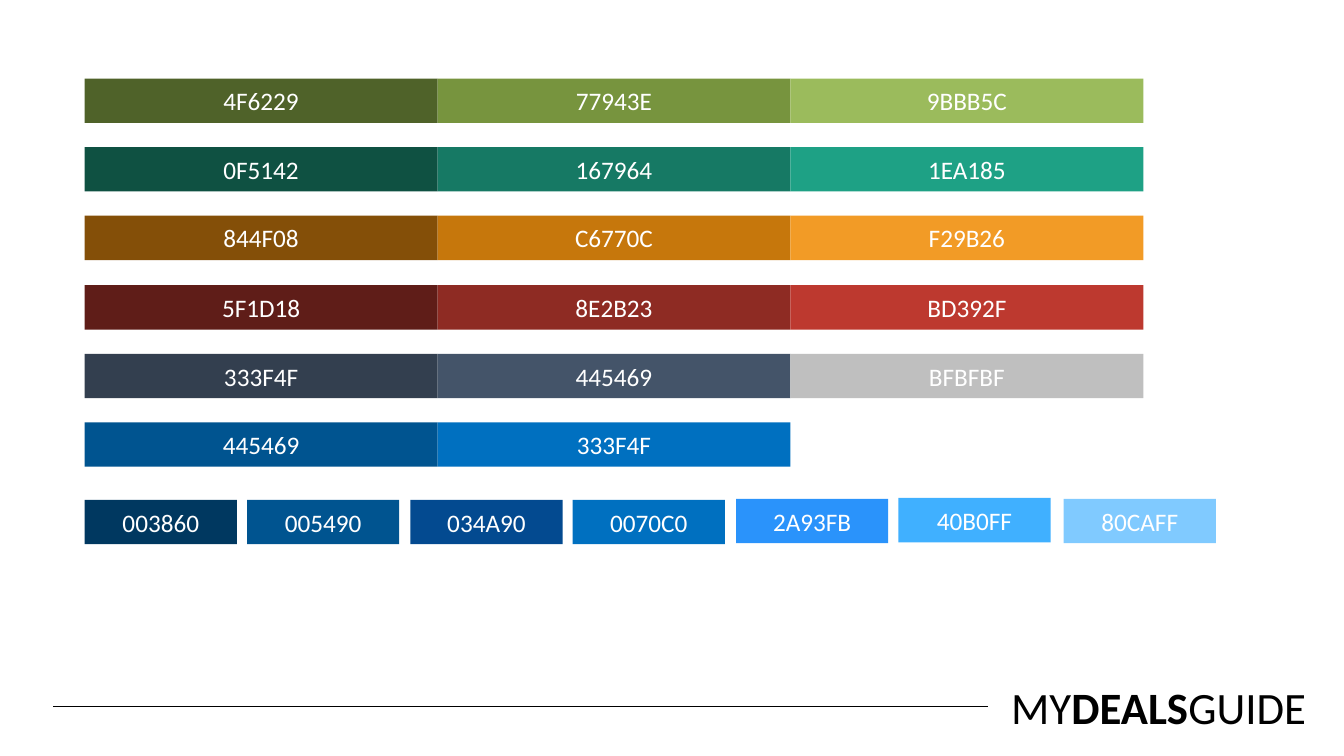
from lxml import etree
from pptx import Presentation
from pptx import util as u
from pptx.dml.color import RGBColor
from pptx.enum import shapes, text
from pptx.oxml import ns

PX = 9144
LEFT, TOP, HEIGHT = 84, 78, 44
WIDE, ROW_STEP = 350, 68.2
NARROW, STRIP_STEP, STRIP_TOP = 151, 161.4, 496

ROWS = [
    [("4F6229", "4F6229"), ("77943E", "77943E"), ("9BBB5C", "9BBB5C")],
    [("0F5142", "0F5142"), ("167964", "167964"), ("1EA185", "1EA185")],
    [("844F08", "844F08"), ("C6770C", "C6770C"), ("F29B26", "F29B26")],
    [("5F1D18", "5F1D18"), ("8E2B23", "8E2B23"), ("BD392F", "BD392F")],
    [("333F4F", "333F4F"), ("445469", "445469"), ("BFBFBF", "BFBFBF")],
    [("445469", "005490"), ("333F4F", "0070C0")],
]
STRIP = [
    ("003860", 0, 0), ("005490", 0, 0), ("034A90", 0, 0), ("0070C0", 0, 0),
    ("2A93FB", 0, -1), ("40B0FF", 0, -2), ("80CAFF", 3, -1),
]
BRAND = [("MY", False), ("DEALS", True), ("GUIDE", False)]


def px(*lengths):
    """Turn pixel lengths into EMU."""
    return [u.Emu(round(n) * PX) for n in lengths]


def color(value):
    """Return the colour of a hex string."""
    return RGBColor.from_string(value)


def add_run(p, words, size, hue, **formats):
    """Append a formatted run to a paragraph."""
    r = p.add_run()
    r.text = words
    values = {"name": "Calibri", "size": u.Pt(size), **formats}
    for key, value in values.items():
        setattr(r.font, key, value)
    r.font.color.rgb = color(hue)


def add_swatch(s, label, fill, x, y, width):
    """Draw a filled rectangle with a centred label."""
    sp = s.shapes.add_shape(shapes.MSO_SHAPE.RECTANGLE, *px(x, y, width, HEIGHT))
    sp.shadow.inherit = False
    sp.fill.solid()
    sp.fill.fore_color.rgb = color(fill)
    sp.line.fill.background()
    tf = sp.text_frame
    tf.vertical_anchor = text.MSO_ANCHOR.MIDDLE
    p = tf.paragraphs[0]
    p.alignment = text.PP_ALIGN.CENTER
    add_run(p, label, 18, "FFFFFF")


def add_rule(s, x1, y1, x2, y2):
    """Draw a thin black line."""
    line = s.shapes.add_connector(shapes.MSO_CONNECTOR.STRAIGHT, *px(x1, y1, x2, y2))
    line.line.color.rgb = color("000000")
    line.line.width = u.Pt(0.5)
    etree.SubElement(line._element.spPr, ns.qn("a:effectLst"))


def add_wordmark(s, x, y, width, height):
    """Write the footer name in mixed weights."""
    tf = s.shapes.add_textbox(*px(x, y, width, height)).text_frame
    tf.word_wrap = True
    tf.auto_size = text.MSO_AUTO_SIZE.SHAPE_TO_FIT_TEXT
    for words, bold in BRAND:
        add_run(tf.paragraphs[0], words, 32, "000000", bold=bold)


def main():
    """Build the palette slide."""
    prs = Presentation()
    prs.slide_width, prs.slide_height = px(1333, 750)
    s = prs.slides.add_slide(prs.slide_layouts[6])
    for i, row in enumerate(ROWS):
        for j, (label, fill) in enumerate(row):
            add_swatch(s, label, fill, LEFT + j * WIDE, TOP + i * ROW_STEP, WIDE)
    add_wordmark(s, 993, 669, 341, 64)
    add_rule(s, 53, 701, 980, 701)
    for i, (fill, dx, dy) in enumerate(STRIP):
        add_swatch(s, fill, fill, LEFT + i * STRIP_STEP + dx, STRIP_TOP + dy, NARROW)
    prs.save("out.pptx")


if __name__ == "__main__":
    main()
